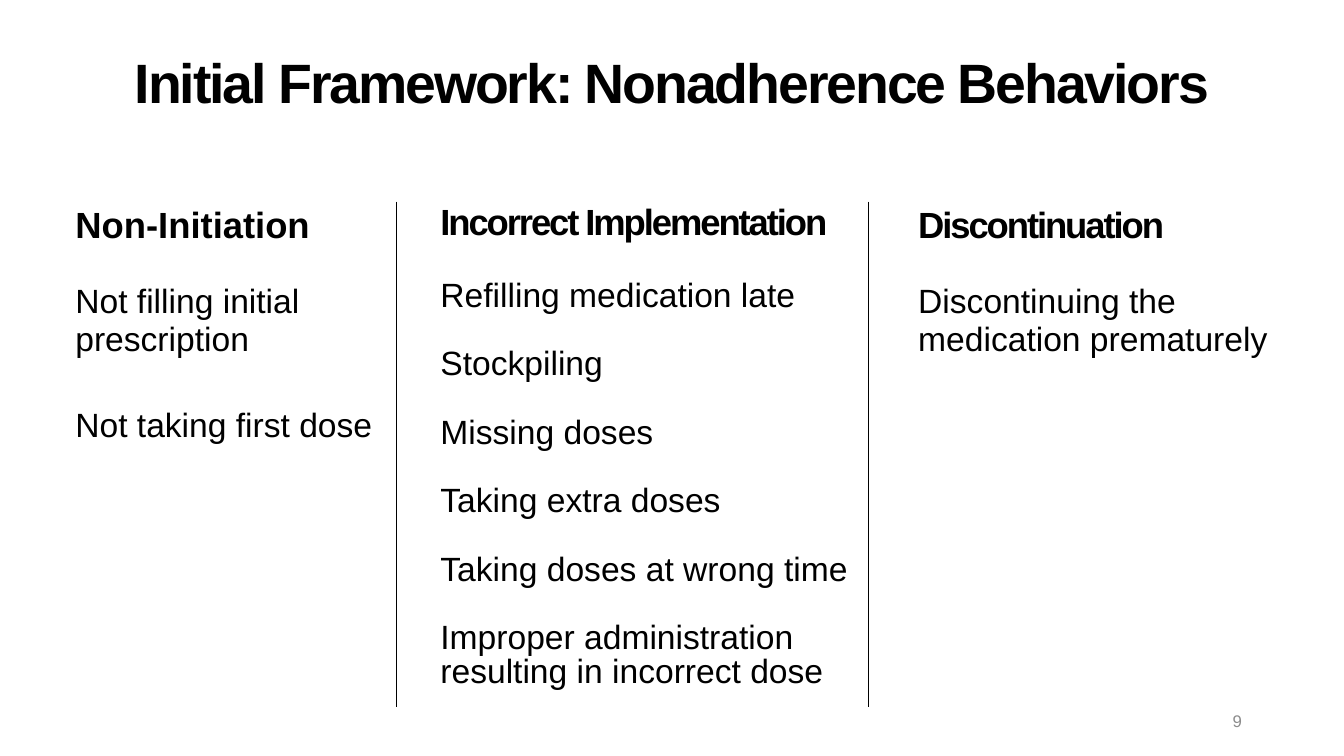
import pptx
import pptx.dml.color
import pptx.enum.shapes
import pptx.enum.text
import pptx.oxml.ns
import pptx.util
from lxml import etree

Cm = pptx.util.Cm
Pt = pptx.util.Pt
ALIGN = pptx.enum.text.PP_ALIGN
ANCHOR = pptx.enum.text.MSO_ANCHOR

COLUMN_TOP = 5.08
COLUMN_HEIGHT = 12.09
DIVIDER_BOTTOM = 17.81


def color(hex_value):
    return pptx.dml.color.RGBColor.from_string(hex_value)


def add_frame(slide, left, top, width, height, anchor=ANCHOR.TOP):
    frame = slide.shapes.add_textbox(Cm(left), Cm(top), Cm(width), Cm(height)).text_frame
    frame.word_wrap = True
    frame.vertical_anchor = anchor
    return frame


def style(paragraph, size, hex_value="000000", bold=False, tracking=0,
          align=ALIGN.LEFT, line_spacing=1.0, before=0):
    paragraph.alignment = align
    paragraph.line_spacing = line_spacing
    paragraph.space_before = Pt(before)
    for run in paragraph.runs:
        run.font.name = "Arial"
        run.font.size = Pt(size)
        run.font.bold = bold
        run.font.color.rgb = color(hex_value)
        if tracking:
            run._r.get_or_add_rPr().set("spc", str(round(tracking * 100)))


def add_label(slide, text, left, top, width, height, size, **options):
    frame = add_frame(slide, left, top, width, height, ANCHOR.MIDDLE)
    frame.text = text
    style(frame.paragraphs[0], size, **options)


def add_column(slide, left, width, heading, behaviors, heading_gap, behavior_gap,
               line_spacing, tracking=0):
    frame = add_frame(slide, left, COLUMN_TOP, width, COLUMN_HEIGHT)
    frame.text = heading
    style(frame.paragraphs[0], 26, bold=True, tracking=tracking, line_spacing=line_spacing)
    for index, behavior in enumerate(behaviors):
        paragraph = frame.add_paragraph()
        paragraph.text = behavior
        style(paragraph, 24, line_spacing=line_spacing,
              before=behavior_gap if index else heading_gap)


def add_divider(slide, x):
    divider = slide.shapes.add_connector(
        pptx.enum.shapes.MSO_CONNECTOR.STRAIGHT,
        Cm(x), Cm(COLUMN_TOP), Cm(x), Cm(DIVIDER_BOTTOM))
    divider.line.color.rgb = color("000000")
    divider.line.width = Pt(0.5)
    etree.SubElement(divider._element.spPr, pptx.oxml.ns.qn("a:effectLst"))


def main():
    deck = pptx.Presentation()
    deck.slide_width = Cm(33.87)
    deck.slide_height = Cm(19.05)
    slide = deck.slides.add_slide(deck.slide_layouts[6])

    add_label(slide, "Initial Framework: Nonadherence Behaviors", 0, 1.25, 33.87, 1.83,
              39.6, bold=True, tracking=-1.5, align=ALIGN.CENTER, line_spacing=0.9)

    add_column(slide, 1.65, 8.26, "Non-Initiation",
               ["Not filling initial prescription", "Not taking first dose"],
               26, 35, 0.93)
    add_column(slide, 10.85, 11.66, "Incorrect Implementation",
               ["Refilling medication late", "Stockpiling", "Missing doses",
                "Taking extra doses", "Taking doses at wrong time",
                "Improper administration resulting in incorrect dose"],
               27, 25, 0.83, tracking=-1.5)
    add_column(slide, 22.89, 9.35, "Discontinuation",
               ["Discontinuing the medication prematurely"],
               26, 35, 0.93, tracking=-1.5)

    for x in (9.98, 21.89):
        add_divider(slide, x)

    add_label(slide, "9", 23.93, 17.65, 7.62, 1.02, 12, hex_value="8C8C8C",
              align=ALIGN.RIGHT)

    deck.save("out.pptx")


if __name__ == "__main__":
    main()
